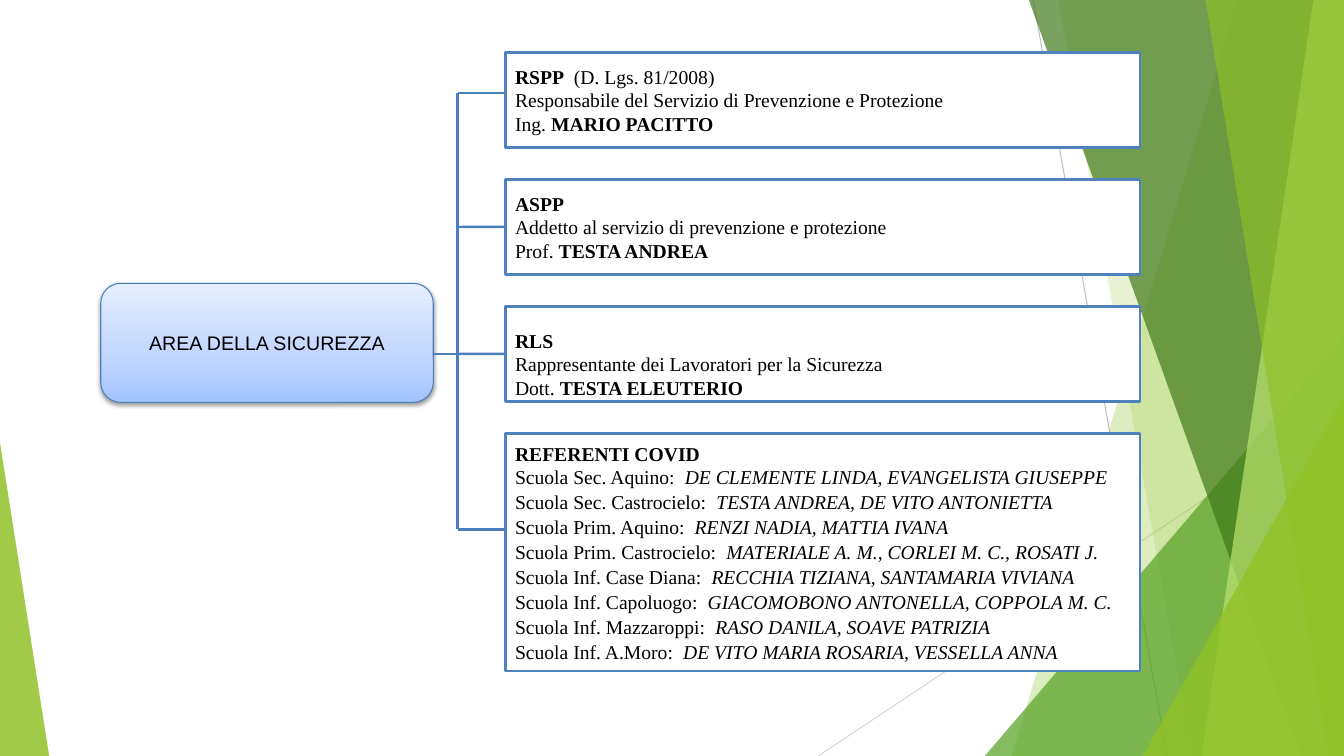
from copy import deepcopy
from dataclasses import dataclass

from pptx import Presentation
from pptx import util as u
from pptx.dml import color as dml
from pptx.enum import shapes, text
from pptx.oxml import ns, xmlchemy
from lxml import etree


@dataclass(frozen=True)
class Theme:
    black: str = "000000"
    white: str = "FFFFFF"
    box_line: str = "4F81BD"
    connector: str = "4B7EBC"
    root_gradient: tuple = ((0, "A4C4FF"), (0.35, "BFD4FF"), (1, "E6EEFF"))
    lime: str = "90C126"
    pale_lime: str = "BEE471"
    green: str = "54A021"
    dark_green: str = "3E7818"
    gray: str = "BEBEBE"
    light_gray: str = "D8D8D8"
    serif: str = "Times New Roman"
    sans: str = "Arial"
    size: int = 14


THEME = Theme()
WIDTH, HEIGHT = 33.87, 19.05
BOX_LEFT, BOX_WIDTH, BOX_HEIGHT = 12.73, 16, 2.39
BOX_TOP, BOX_PITCH = 1.32, 3.2
ROOT_LEFT, ROOT_WIDTH, TRUNK = 2.54, 8.38, 11.53

FACETS = [
    (THEME.lime, 29, 25.5, 31.19, 0),
    (THEME.lime, 20, 30.05, 26.67, 0),
    (THEME.green, 71, 24.82, WIDTH, 8.46),
    (THEME.dark_green, 69, 32.79, 25.93, 0),
    (THEME.pale_lime, 69, 30.28, 33.1, 0),
    (THEME.lime, 64, 33.48, 30.38, 0),
    (THEME.lime, 80, 28.8, WIDTH, 9.98),
]

REFERENTS = [
    ("Sec. Aquino", "DE CLEMENTE LINDA, EVANGELISTA GIUSEPPE"),
    ("Sec. Castrocielo", "TESTA ANDREA, DE VITO ANTONIETTA"),
    ("Prim. Aquino", "RENZI NADIA, MATTIA IVANA"),
    ("Prim. Castrocielo", "MATERIALE A. M., CORLEI M. C., ROSATI J."),
    ("Inf. Case Diana", "RECCHIA TIZIANA, SANTAMARIA VIVIANA"),
    ("Inf. Capoluogo", "GIACOMOBONO ANTONELLA, COPPOLA M. C."),
    ("Inf. Mazzaroppi", "RASO DANILA, SOAVE PATRIZIA"),
    ("Inf. A.Moro", "DE VITO MARIA ROSARIA, VESSELLA ANNA"),
]

ROLES = [
    [[("RSPP", "b"), ("  (D. Lgs. 81/2008)", "")],
     [("Responsabile del Servizio di Prevenzione e Protezione", "")],
     [("Ing. ", ""), ("MARIO PACITTO", "b")]],
    [[("ASPP", "b")],
     [("Addetto al servizio di prevenzione e protezione", "")],
     [("Prof. ", ""), ("TESTA ANDREA", "b")]],
    [[("RLS", "b")],
     [("Rappresentante dei Lavoratori per la Sicurezza", "")],
     [("Dott. ", ""), ("TESTA ELEUTERIO", "b")]],
    [[("REFERENTI COVID", "b")]]
    + [[(f"Scuola {school}:  ", ""), (names, "i")] for school, names in REFERENTS],
]


def set_values(target, values):
    for name, value in values.items():
        setattr(target, name, value)


def rgb(code):
    return dml.RGBColor.from_string(code)


def set_line(line, code, width):
    line.color.rgb = rgb(code)
    line.width = u.Pt(width)


def add_facet(slide, points, code, opacity):
    corners = [(u.Cm(x), u.Cm(y)) for x, y in points]
    builder = slide.shapes.build_freeform(*corners[0], scale=1.0)
    builder.add_line_segments(corners[1:], close=True)
    shape = builder.convert_to_shape()
    shape.shadow.inherit = False
    shape.fill.solid()
    shape.fill.fore_color.rgb = rgb(code)
    shape.line.fill.background()
    fill_color = shape.element.spPr.find(".//" + ns.qn("a:srgbClr"))
    etree.SubElement(fill_color, ns.qn("a:alpha"), val=str(opacity * 1000))


def add_line(slide, start, end, code=THEME.connector, width=1.75):
    connector = slide.shapes.add_connector(
        shapes.MSO_CONNECTOR.STRAIGHT, *(u.Cm(value) for value in start + end))
    set_line(connector.line, code, width)
    etree.SubElement(connector.element.spPr, ns.qn("a:effectLst"))
    return connector


def add_box(slide, kind, left, top, width, height, line):
    shape = slide.shapes.add_shape(
        kind, u.Cm(left), u.Cm(top), u.Cm(width), u.Cm(height))
    shape.shadow.inherit = False
    set_line(shape.line, *line)
    set_values(shape.text_frame, {
        "word_wrap": True, "vertical_anchor": text.MSO_ANCHOR.MIDDLE})
    return shape


def write_paragraph(paragraph, runs, font_name, alignment):
    paragraph.alignment = alignment
    for content, style in runs:
        run = paragraph.add_run()
        run.text = content
        set_values(run.font, {
            "name": font_name, "size": u.Pt(THEME.size),
            "bold": style == "b", "italic": style == "i"})
        run.font.color.rgb = rgb(THEME.black)


def add_role(slide, top, height, lines):
    shape = add_box(slide, shapes.MSO_SHAPE.RECTANGLE, BOX_LEFT, top,
                    BOX_WIDTH, height, (THEME.box_line, 2))
    shape.fill.solid()
    shape.fill.fore_color.rgb = rgb(THEME.white)
    frame = shape.text_frame
    for index, runs in enumerate(lines):
        paragraph = frame.add_paragraph() if index else frame.paragraphs[0]
        write_paragraph(paragraph, runs, THEME.serif, text.PP_ALIGN.LEFT)
    return shape


def add_root(slide):
    shape = add_box(slide, shapes.MSO_SHAPE.ROUNDED_RECTANGLE, ROOT_LEFT, 7.14,
                    ROOT_WIDTH, 3, (THEME.connector, 0.75))
    shape.fill.gradient()
    properties = shape.element.spPr
    stop_list = properties.find(".//" + ns.qn("a:gsLst"))
    stop_list.insert(1, deepcopy(stop_list[0]))
    for stop, (position, code) in zip(shape.fill.gradient_stops, THEME.root_gradient):
        stop.position = position
        stop.color.rgb = rgb(code)
    shape.fill.gradient_angle = 90
    shadow = etree.SubElement(
        properties.find(ns.qn("a:effectLst")), ns.qn("a:outerShdw"),
        blurRad=str(u.Pt(3.1)), dist=str(u.Pt(1.6)), dir="5400000", rotWithShape="0")
    shadow_color = etree.SubElement(shadow, ns.qn("a:srgbClr"), val=THEME.black)
    etree.SubElement(shadow_color, ns.qn("a:alpha"), val="38000")
    write_paragraph(shape.text_frame.paragraphs[0], [("AREA DELLA SICUREZZA", "")],
                    THEME.sans, text.PP_ALIGN.CENTER)


def add_background(slide):
    add_line(slide, (26.04, 0), (29.41, HEIGHT), THEME.gray, 0.75)
    add_line(slide, (WIDTH, 10.24), (20.62, HEIGHT), THEME.light_gray, 0.75)
    for code, opacity, bottom_x, top_x, top_y in FACETS:
        points = [(WIDTH, HEIGHT), (bottom_x, HEIGHT), (top_x, top_y)]
        if top_y == 0:
            points.append((WIDTH, 0))
        add_facet(slide, points, code, opacity)
    add_facet(slide, [(1.24, HEIGHT), (0, HEIGHT), (0, 11.15)], THEME.lime, 84)


def add_chart_tree(slide):
    add_root(slide)
    heights = [BOX_HEIGHT] * 3 + [5.99]
    boxes = [add_role(slide, BOX_TOP + index * BOX_PITCH, height, lines)
             for index, (height, lines) in enumerate(zip(heights, ROLES))]
    rspp, aspp, rls, referents = boxes
    set_values(rls.text_frame, {
        "vertical_anchor": text.MSO_ANCHOR.BOTTOM, "margin_bottom": u.Cm(0.05)})
    for paragraph in referents.text_frame.paragraphs[1:]:
        paragraph.space_after = u.Pt(1)

    branches = [(2.34, None), (5.72, aspp), (8.92, rls), (13.34, None)]
    add_line(slide, (TRUNK, branches[0][0]), (TRUNK, branches[-1][0]))
    add_line(slide, (ROOT_LEFT + ROOT_WIDTH, 8.92), (TRUNK, 8.92))
    for y, box in branches:
        connector = add_line(slide, (TRUNK, y), (BOX_LEFT, y))
        if box is not None:
            connector.end_connect(box, 1)


def main():
    presentation = Presentation()
    set_values(presentation, {
        "slide_width": u.Cm(WIDTH), "slide_height": u.Cm(HEIGHT)})
    slide = presentation.slides.add_slide(presentation.slide_layouts[6])
    add_background(slide)
    add_chart_tree(slide)
    presentation.save("out.pptx")


if __name__ == "__main__":
    main()
